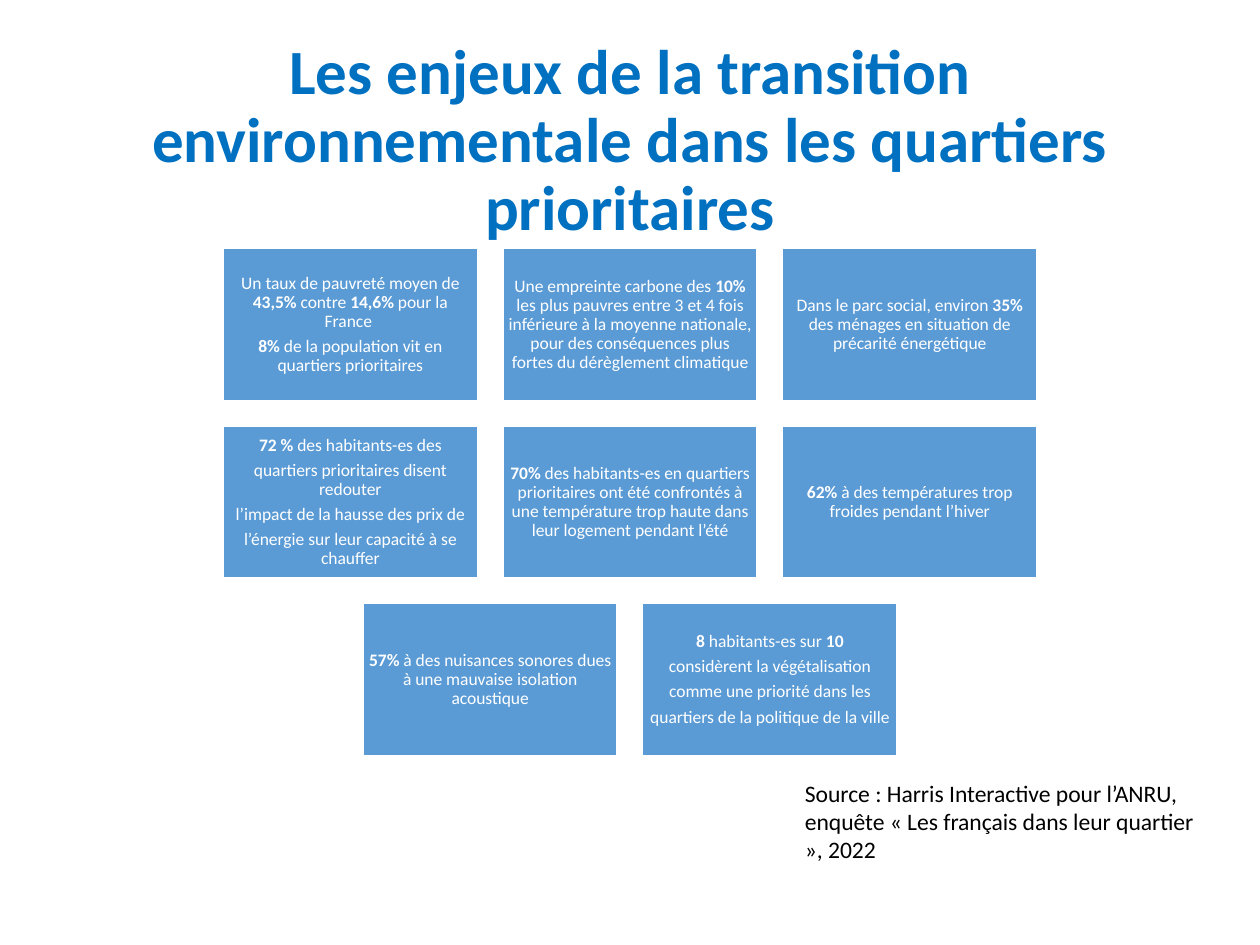
from pptx import Presentation
from pptx.dml.color import RGBColor
from pptx.enum.shapes import MSO_SHAPE as Shape
from pptx.enum.text import MSO_ANCHOR as Anchor, MSO_AUTO_SIZE as AutoSize, PP_ALIGN as Align
from pptx.util import Inches, Pt

FONT = "Calibri"
COLORS = {"title": "0070C0", "card": "5B9BD5", "white": "FFFFFF", "source": "000000"}

# Card grid, in inches
SLIDE_WIDTH, SLIDE_HEIGHT = 10, 7.5
CARD_WIDTH, CARD_HEIGHT, GAP = 2.02, 1.21, 0.2
GRID_TOP = 1.97

# Rows of cards; each card is a list of paragraphs, ** marks bold figures
ROWS = [
    [
        ["Un taux de pauvreté moyen de **43,5%** contre **14,6% **pour la France ",
         "**8%** de la population vit en quartiers prioritaires"],
        ["Une empreinte carbone des **10%** les plus pauvres entre 3 et 4 fois inférieure à la "
         "moyenne nationale, pour des conséquences plus fortes du dérèglement climatique"],
        ["Dans le parc social, environ **35%** des ménages en situation de précarité énergétique"],
    ],
    [
        ["**72 % **des habitants-es des",
         "quartiers prioritaires disent redouter",
         "l’impact de la hausse des prix de",
         "l’énergie sur leur capacité à se chauffer"],
        ["**70%** des habitants-es en quartiers prioritaires ont été confrontés à une "
         "température trop haute dans leur logement pendant l’été"],
        ["**62% **à des températures trop froides pendant l’hiver"],
    ],
    [
        ["**57% **à des nuisances sonores dues à une mauvaise isolation acoustique"],
        ["**8** habitants-es sur **10**",
         "considèrent la végétalisation",
         "comme une priorité dans les",
         "quartiers de la politique de la ville"],
    ],
]


def color(name):
    return RGBColor.from_string(COLORS[name])


def set_font(paragraph, size, color_name):
    paragraph.font.name = FONT
    paragraph.font.size = Pt(size)
    paragraph.font.color.rgb = color(color_name)


def add_title(slide, text):
    title = slide.shapes.title
    title.left, title.top = Inches(0.69), Inches(0.4)
    title.width, title.height = Inches(8.62), Inches(1.45)
    frame = title.text_frame
    frame.text = text
    frame.auto_size = AutoSize.NONE
    frame.vertical_anchor = Anchor.MIDDLE
    heading = frame.paragraphs[0]
    heading.alignment = Align.CENTER
    heading.line_spacing = 0.9
    set_font(heading, 36, "title")
    heading.font.bold = True


def write_marked(paragraph, text):
    for index, part in enumerate(text.split("**")):
        if part:
            run = paragraph.add_run()
            run.text = part
            if index % 2:
                run.font.bold = True


def add_card(slide, left, top, lines):
    card = slide.shapes.add_shape(Shape.RECTANGLE, Inches(left), Inches(top),
                                  Inches(CARD_WIDTH), Inches(CARD_HEIGHT))
    card.shadow.inherit = False
    card.fill.solid()
    card.fill.fore_color.rgb = color("card")
    card.line.color.rgb = color("white")
    card.line.width = Pt(1)
    frame = card.text_frame
    frame.word_wrap = True
    frame.vertical_anchor = Anchor.MIDDLE
    frame.margin_left = frame.margin_right = Inches(0.04)
    frame.margin_top = frame.margin_bottom = Inches(0.04)
    for index, line in enumerate(lines):
        paragraph = frame.add_paragraph() if index else frame.paragraphs[0]
        paragraph.alignment = Align.CENTER
        paragraph.line_spacing = 0.9
        paragraph.space_after = Pt(3.5)
        set_font(paragraph, 10, "white")
        write_marked(paragraph, line)


def add_card_row(slide, top, cards):
    row_width = len(cards) * (CARD_WIDTH + GAP) - GAP
    first_left = (SLIDE_WIDTH - row_width) / 2
    for column, lines in enumerate(cards):
        add_card(slide, first_left + column * (CARD_WIDTH + GAP), top, lines)


def add_source(slide, text):
    source = slide.shapes.add_textbox(Inches(6.29), Inches(6.13), Inches(3.4), Inches(0.78))
    frame = source.text_frame
    frame.word_wrap = True
    frame.auto_size = AutoSize.SHAPE_TO_FIT_TEXT
    frame.text = text
    set_font(frame.paragraphs[0], 13.5, "source")


def main():
    deck = Presentation()
    deck.slide_width, deck.slide_height = Inches(SLIDE_WIDTH), Inches(SLIDE_HEIGHT)
    slide = deck.slides.add_slide(deck.slide_layouts[5])  # title only

    add_title(slide, "Les enjeux de la transition environnementale dans les quartiers prioritaires")

    # Key figures, each row centred on the slide
    for row, cards in enumerate(ROWS):
        add_card_row(slide, GRID_TOP + row * (CARD_HEIGHT + GAP), cards)

    add_source(slide, "Source : Harris Interactive pour l’ANRU, enquête "
                      "« Les français dans leur quartier », 2022")
    deck.save("out.pptx")


if __name__ == "__main__":
    main()
